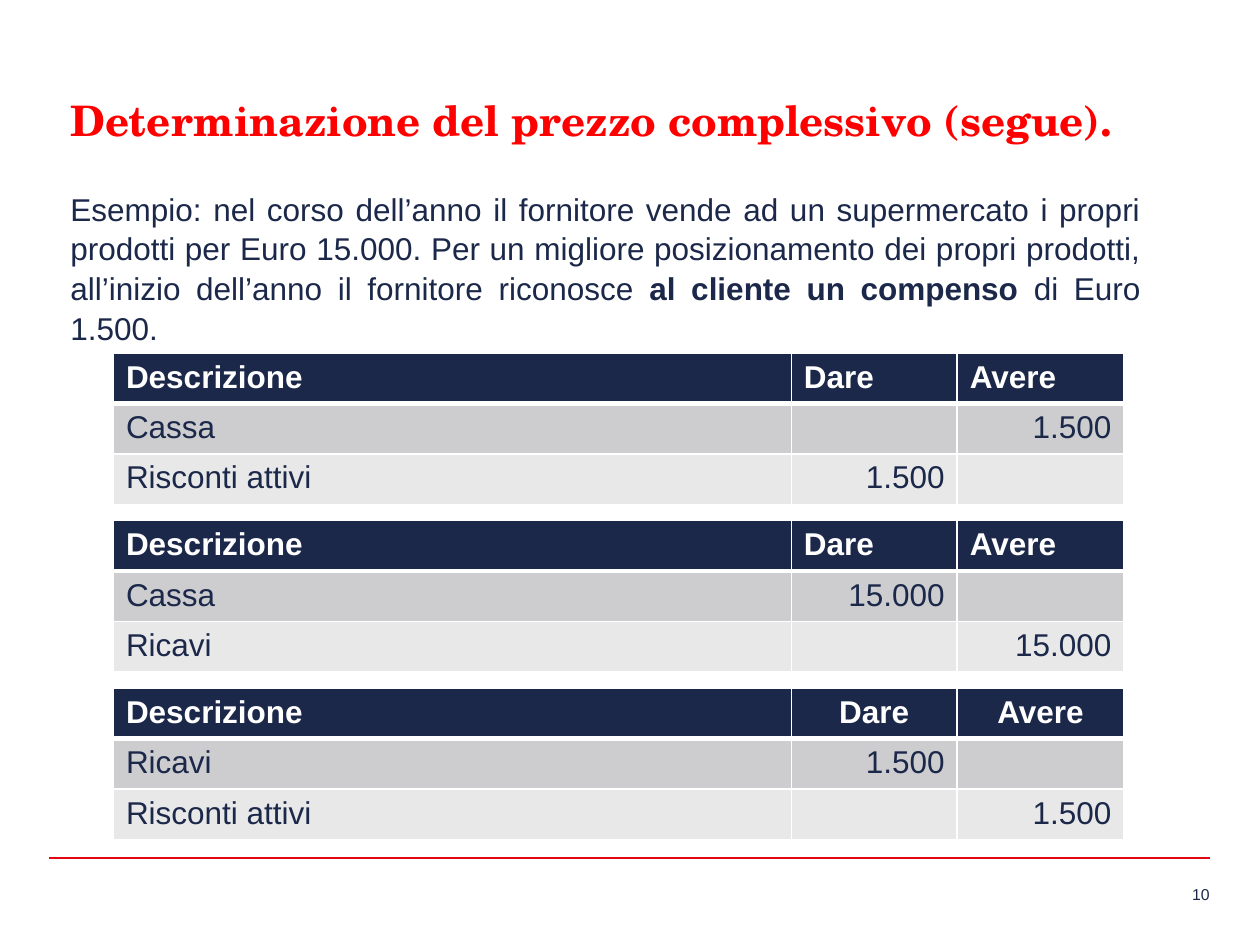
from dataclasses import dataclass

from lxml import etree
from pptx import Presentation
from pptx import util as u
from pptx.dml.color import RGBColor
from pptx.enum import shapes, text
from pptx.oxml.ns import qn


@dataclass(frozen=True)
class Theme:
    navy: str = "1B2849"
    red: str = "FF0000"
    rule: str = "E30613"
    white: str = "FFFFFF"
    bands: tuple = ("CDCDD0", "E8E8E9")
    heading: str = "TeX Gyre Schola"
    sans: str = "Arial"
    title_size: int = 24
    body_size: int = 18
    number_size: int = 9


LEFT = text.PP_ALIGN.LEFT
CENTER = text.PP_ALIGN.CENTER
RIGHT = text.PP_ALIGN.RIGHT
JUSTIFY = text.PP_ALIGN.JUSTIFY

COLUMNS = (387.4, 94.8, 95.3)
ROW_HEIGHT = 28.8
TABLE_LEFT = 64.8
TABLE_TOP = 201.8
TABLE_STEP = 95.76
HEADER = ("Descrizione", "Dare", "Avere")
ENTRIES = (
    (LEFT, ("Cassa", "", "1.500"), ("Risconti attivi", "1.500", "")),
    (LEFT, ("Cassa", "15.000", ""), ("Ricavi", "", "15.000")),
    (CENTER, ("Ricavi", "1.500", ""), ("Risconti attivi", "", "1.500")),
)


class SlideBuilder:
    def __init__(self, slide, theme):
        self.slide = slide
        self.theme = theme

    def style(self, font, size, color, bold=False, name=None):
        font.name = name or self.theme.sans
        font.size = u.Pt(size)
        font.bold = bold
        font.color.rgb = RGBColor.from_string(color)

    def text(self, frame, spans, size, color, align=LEFT, name=None,
             inset=None, spacing=None):
        box = self.slide.shapes.add_textbox(*map(u.Pt, frame))
        body = box.text_frame
        body.word_wrap = True
        if inset is not None:
            body.margin_left = body.margin_right = u.Pt(inset)
            body.margin_top = body.margin_bottom = u.Pt(inset)
        para = body.paragraphs[0]
        para.alignment = align
        if spacing:
            para.line_spacing = spacing
        for words, bold in spans:
            span = para.add_run()
            span.text = words
            self.style(span.font, size, color, bold, name)

    def line(self, start, end, color, width):
        rule = self.slide.shapes.add_connector(
            shapes.MSO_CONNECTOR.STRAIGHT, *map(u.Pt, start + end))
        rule.line.color.rgb = RGBColor.from_string(color)
        rule.line.width = u.Pt(width)
        etree.SubElement(rule._element.spPr, qn("a:effectLst"))

    def borders(self, cell, widths):
        properties = cell._tc.get_or_add_tcPr()
        for side, width in widths.items():
            edge = etree.SubElement(properties, qn(f"a:ln{side}"), w=str(u.Pt(width)))
            fill = etree.SubElement(edge, qn("a:solidFill"))
            etree.SubElement(fill, qn("a:srgbClr"), val=self.theme.white)

    def table(self, left, top, rows, header_align):
        theme = self.theme
        frame = self.slide.shapes.add_table(
            len(rows), len(COLUMNS), u.Pt(left), u.Pt(top),
            u.Pt(sum(COLUMNS)), u.Pt(ROW_HEIGHT * len(rows)))
        grid = frame.table
        for column, width in zip(grid.columns, COLUMNS):
            column.width = u.Pt(width)
        for i, values in enumerate(rows):
            header = i == 0
            fill = theme.navy if header else theme.bands[(i - 1) % 2]
            color = theme.white if header else theme.navy
            grid.rows[i].height = u.Pt(ROW_HEIGHT)
            for j, value in enumerate(values):
                cell = grid.cell(i, j)
                self.borders(cell, {"L": 1, "R": 1, "T": 3 if i == 1 else 1,
                                    "B": 3 if header else 1})
                cell.fill.solid()
                cell.fill.fore_color.rgb = RGBColor.from_string(fill)
                para = cell.text_frame.paragraphs[0]
                para.text = value
                if j:
                    para.alignment = header_align if header else RIGHT
                for span in para.runs:
                    self.style(span.font, theme.body_size, color, header)


def main():
    theme = Theme()
    deck = Presentation()
    deck.slide_width, deck.slide_height = u.Pt(720), u.Pt(540)
    page = SlideBuilder(deck.slides.add_slide(deck.slide_layouts[6]), theme)

    page.text((641.5, 505.4, 49.7, 10.8), [("10", False)], theme.number_size,
              theme.navy, RIGHT, inset=0)
    page.line((28, 490.3), (691.2, 490.3), theme.rule, 1)
    page.text((33.1, 50.4, 653.8, 36),
              [("Determinazione del prezzo complessivo (segue).", True)],
              theme.title_size, theme.red, name=theme.heading)
    page.text((33.1, 103.7, 625.7, 174.2), [
        ("Esempio: nel corso dell’anno il fornitore vende ad un supermercato "
         "i propri prodotti per Euro 15.000. Per un migliore posizionamento dei "
         "propri prodotti, all’inizio dell’anno il fornitore riconosce ", False),
        ("al cliente un compenso", True),
        (" di Euro 1.500.", False),
    ], theme.body_size, theme.navy, JUSTIFY, spacing=1.05)

    for i, (align, *rows) in enumerate(ENTRIES):
        page.table(TABLE_LEFT, TABLE_TOP + i * TABLE_STEP, [HEADER, *rows], align)

    deck.save("out.pptx")


if __name__ == "__main__":
    main()
